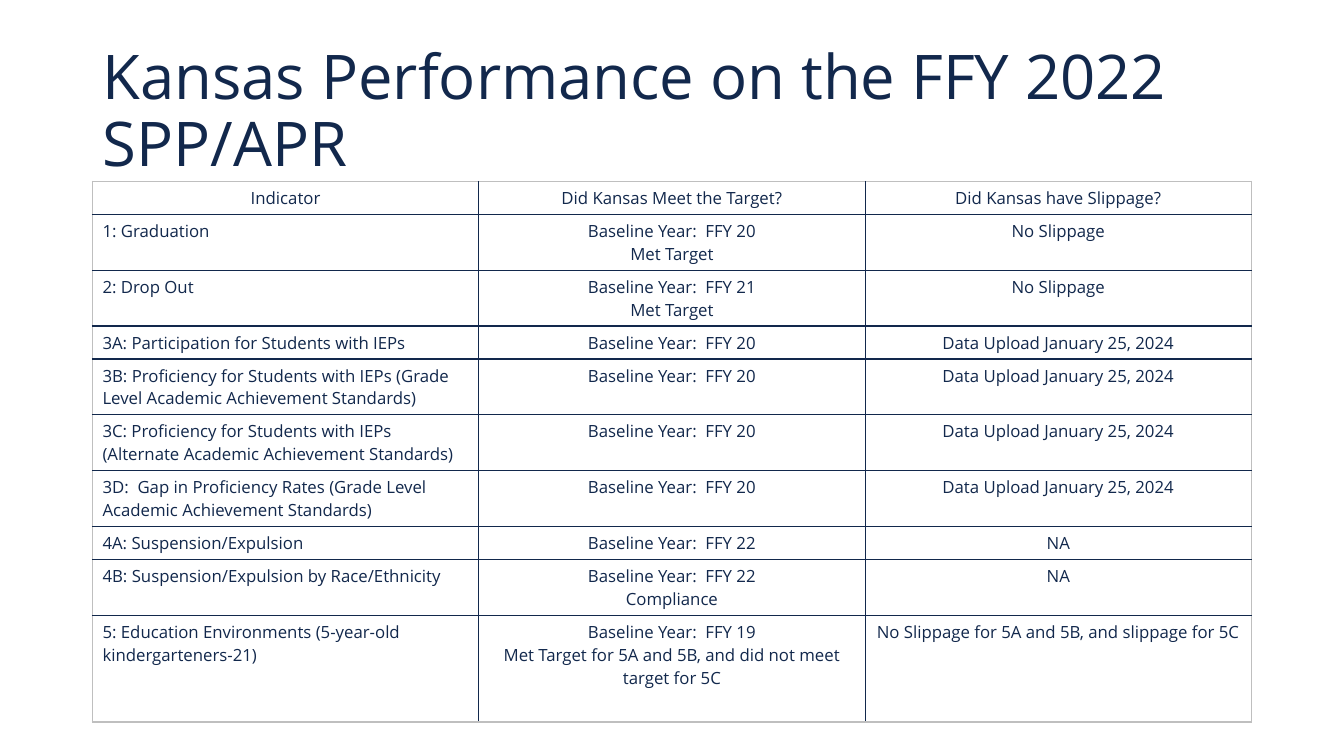
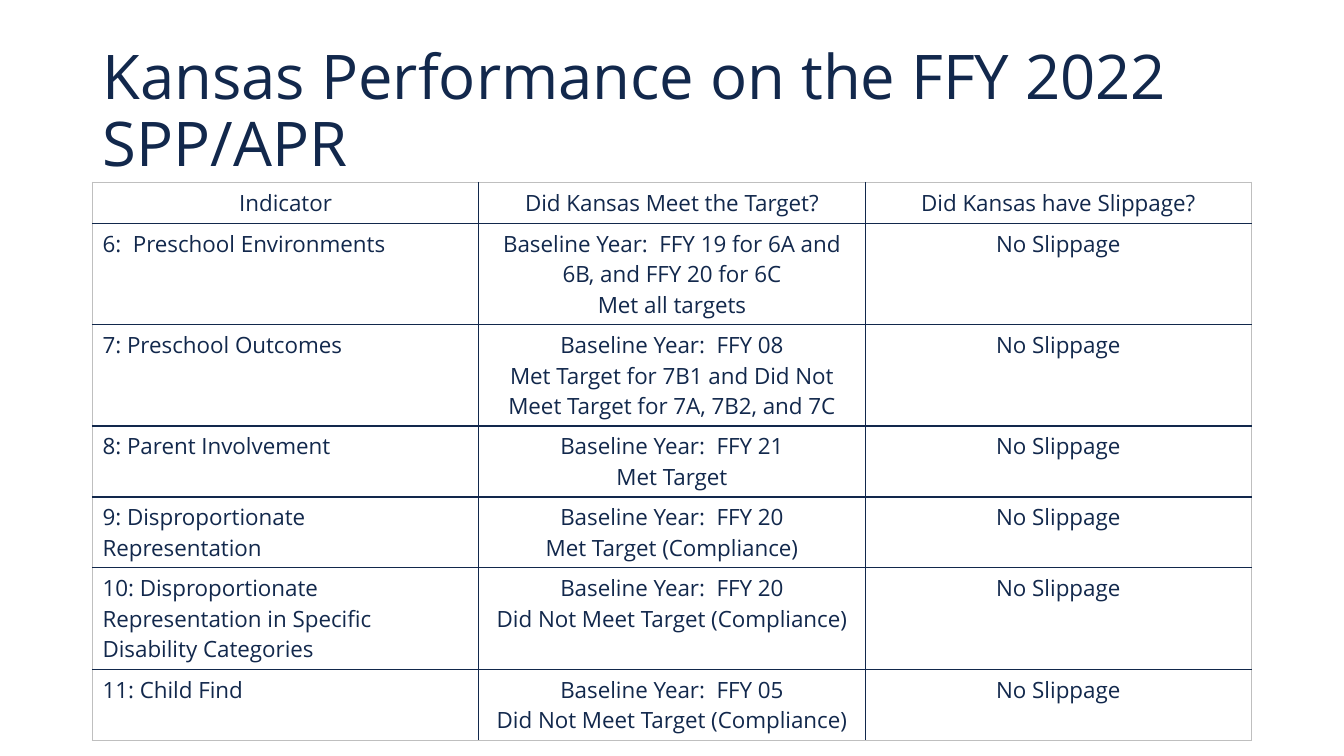
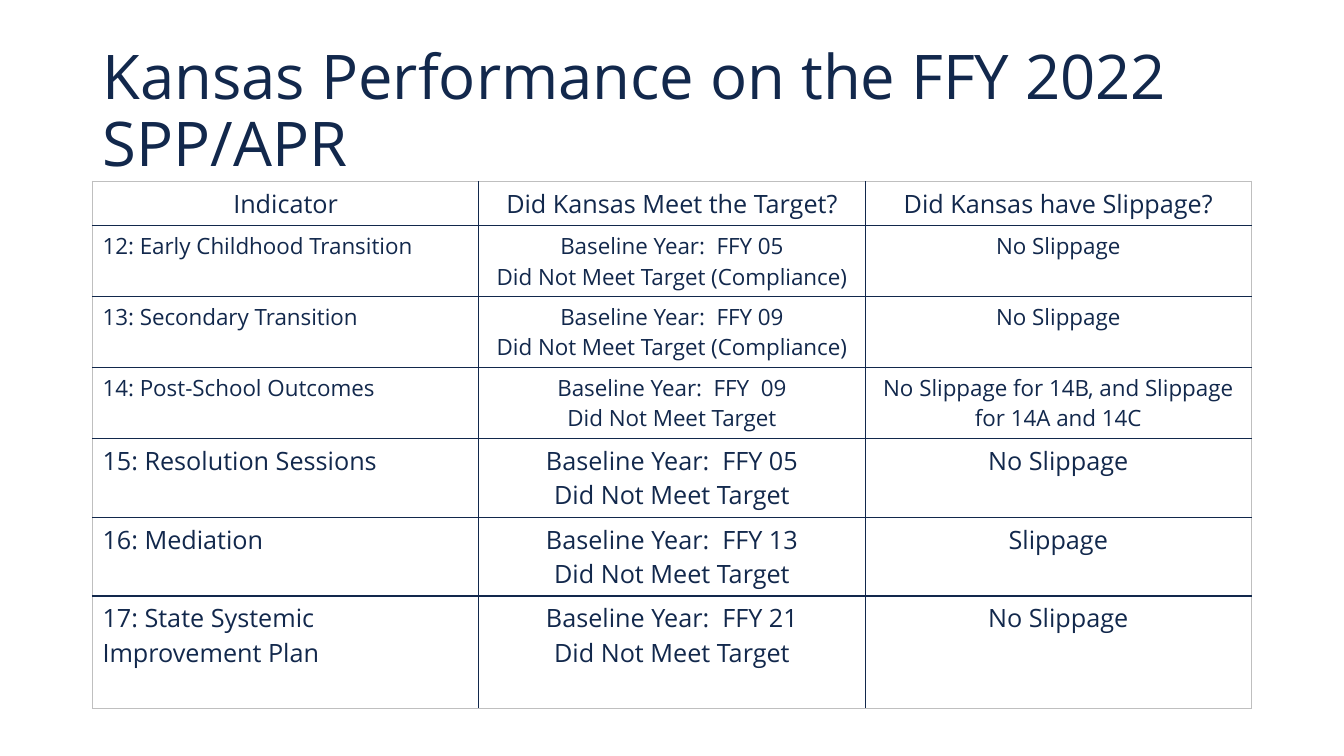
from pptx import Presentation
from pptx.dml.color import RGBColor
from pptx.enum.text import MSO_ANCHOR, MSO_AUTO_SIZE, PP_ALIGN
from pptx.oxml.ns import qn
from pptx.util import Cm, Pt
from lxml.etree import SubElement

NAVY = RGBColor(0x12, 0x28, 0x4C)
GREY = RGBColor(0xBF, 0xBF, 0xBF)
WHITE = RGBColor(0xFF, 0xFF, 0xFF)
FONT = "Open Sans"
TITLE = "Kansas Performance on the FFY 2022 SPP/APR"
HEADER = ("Indicator", "Did Kansas Meet the Target?", "Did Kansas have Slippage?")
LEFT, WIDTH = Cm(2.33), Cm(29.21)
UPLOAD = "Data Upload January 25, 2024"

# Each table: top, least row height, last row height, text size of each row, body rows
TABLES = [
    (Cm(4.57), Cm(0.74), Cm(2.69), [12] * 10, [
        ("1: Graduation", "Baseline Year:  FFY 20\nMet Target", "No Slippage"),
        ("2: Drop Out", "Baseline Year:  FFY 21\nMet Target", "No Slippage"),
        ("3A: Participation for Students with IEPs", "Baseline Year:  FFY 20", UPLOAD),
        ("3B: Proficiency for Students with IEPs (Grade Level Academic Achievement Standards)",
         "Baseline Year:  FFY 20", UPLOAD),
        ("3C: Proficiency for Students with IEPs (Alternate Academic Achievement Standards)",
         "Baseline Year:  FFY 20", UPLOAD),
        ("3D:  Gap in Proficiency Rates (Grade Level Academic Achievement Standards)",
         "Baseline Year:  FFY 20", UPLOAD),
        ("4A: Suspension/Expulsion", "Baseline Year:  FFY 22", "NA"),
        ("4B: Suspension/Expulsion by Race/Ethnicity",
         "Baseline Year:  FFY 22\nCompliance", "NA"),
        ("5: Education Environments (5-year-old kindergarteners-21)",
         "Baseline Year:  FFY 19\nMet Target for 5A and 5B, and did not meet target for 5C",
         "No Slippage for 5A and 5B, and slippage for 5C"),
    ]),
    (Cm(4.6), Cm(1.03), Cm(1.79), [16] * 7, [
        ("6:  Preschool Environments",
         "Baseline Year:  FFY 19 for 6A and 6B, and FFY 20 for 6C\nMet all targets",
         "No Slippage"),
        ("7: Preschool Outcomes",
         "Baseline Year:  FFY 08\nMet Target for 7B1 and Did Not Meet Target for 7A, 7B2, and 7C",
         "No Slippage"),
        ("8: Parent Involvement", "Baseline Year:  FFY 21\nMet Target", "No Slippage"),
        ("9: Disproportionate Representation",
         "Baseline Year:  FFY 20\nMet Target (Compliance)", "No Slippage"),
        ("10: Disproportionate Representation in Specific Disability Categories",
         "Baseline Year:  FFY 20\nDid Not Meet Target (Compliance)", "No Slippage"),
        ("11: Child Find",
         "Baseline Year:  FFY 05\nDid Not Meet Target (Compliance)", "No Slippage"),
    ]),
    (Cm(4.57), Cm(1.03), Cm(2.84), [18, 16, 16, 16, 18, 18, 18], [
        ("12: Early Childhood Transition",
         "Baseline Year:  FFY 05\nDid Not Meet Target (Compliance)", "No Slippage"),
        ("13: Secondary Transition",
         "Baseline Year:  FFY 09\nDid Not Meet Target (Compliance)", "No Slippage"),
        ("14: Post-School Outcomes", "Baseline Year:  FFY  09\nDid Not Meet Target",
         "No Slippage for 14B, and Slippage for 14A and 14C"),
        ("15: Resolution Sessions", "Baseline Year:  FFY 05\nDid Not Meet Target", "No Slippage"),
        ("16: Mediation", "Baseline Year:  FFY 13\nDid Not Meet Target", "Slippage"),
        ("17: State Systemic Improvement Plan",
         "Baseline Year:  FFY 21\nDid Not Meet Target", "No Slippage"),
    ]),
]


def style_paragraph(paragraph, size, alignment):
    paragraph.alignment = alignment
    for run in paragraph.runs:
        run.font.name = FONT
        run.font.size = Pt(size)
        run.font.color.rgb = NAVY


def add_borders(cell, outer_sides):
    """Draw navy cell borders, grey on the sides that lie on the table's edge."""
    properties = cell._tc.get_or_add_tcPr()
    for side in "LRTB":
        line = SubElement(properties, qn(f"a:ln{side}"), w=str(Pt(1)))
        fill = SubElement(line, qn("a:solidFill"))
        color = GREY if side in outer_sides else NAVY
        SubElement(fill, qn("a:srgbClr"), val=str(color))


presentation = Presentation()
presentation.slide_width = Cm(33.87)
presentation.slide_height = Cm(19.05)
title_only = presentation.slide_layouts[5]

for top, row_height, last_height, sizes, body in TABLES:
    slide = presentation.slides.add_slide(title_only)
    title = slide.shapes.title
    title.left, title.top, title.width, title.height = LEFT, Cm(1.01), WIDTH, Cm(3.68)
    frame = title.text_frame
    frame.text = TITLE
    frame.word_wrap = True
    frame.auto_size = MSO_AUTO_SIZE.NONE
    frame.vertical_anchor = MSO_ANCHOR.MIDDLE
    frame.paragraphs[0].line_spacing = 0.9
    style_paragraph(frame.paragraphs[0], 44, PP_ALIGN.LEFT)

    rows = [HEADER, *body]
    last_row, last_column = len(rows) - 1, len(HEADER) - 1
    table = slide.shapes.add_table(
        len(rows), len(HEADER), LEFT, top, WIDTH, row_height * len(rows)).table
    table.first_row = False
    table.horz_banding = False
    for row in table.rows:
        row.height = row_height
    table.rows[last_row].height = last_height

    for r, (texts, size) in enumerate(zip(rows, sizes)):
        for c, text in enumerate(texts):
            cell = table.cell(r, c)
            cell.text_frame.text = text
            alignment = PP_ALIGN.LEFT if r > 0 and c == 0 else PP_ALIGN.CENTER
            for paragraph in cell.text_frame.paragraphs:
                style_paragraph(paragraph, size, alignment)
            edges = {"L": c == 0, "R": c == last_column, "T": r == 0, "B": r == last_row}
            add_borders(cell, [side for side, on_edge in edges.items() if on_edge])
            cell.fill.solid()
            cell.fill.fore_color.rgb = WHITE

presentation.save("out.pptx")
